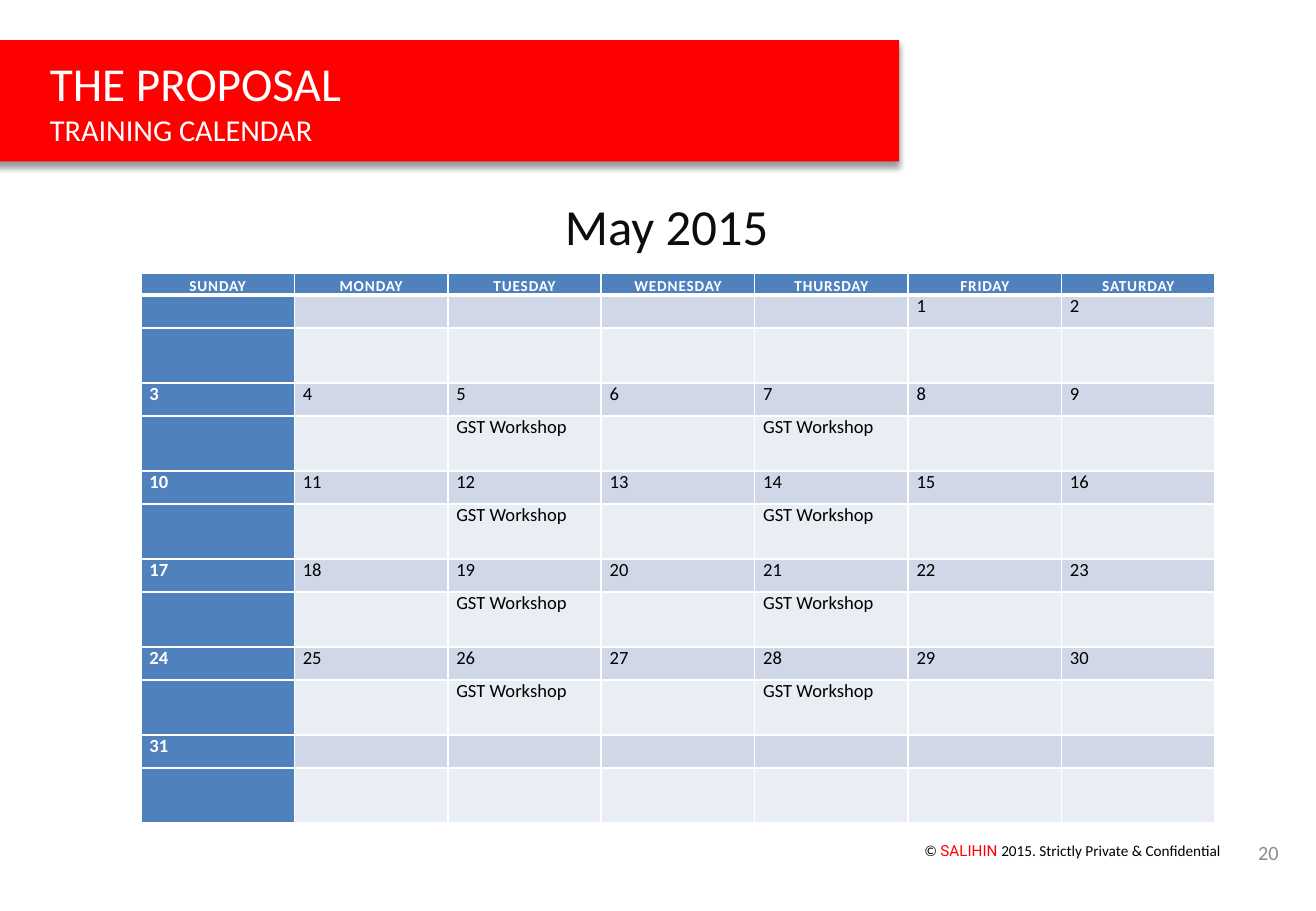
from lxml.etree import SubElement
from pptx import Presentation
from pptx.dml.color import RGBColor
from pptx.enum.text import MSO_ANCHOR as Anchor, MSO_AUTO_SIZE as AutoSize, PP_ALIGN as Align
from pptx.oxml.ns import qn
from pptx.util import Inches, Pt

COLORS = {
    "banner": "FF0000", "white": "FFFFFF", "black": "000000", "month": "0D0D0D",
    "header": "4F81BD", "dates": "D0D8E8", "events": "E9EDF4", "page_number": "8C8C8C",
}
DAYS = ["SUNDAY", "MONDAY", "TUESDAY", "WEDNESDAY", "THURSDAY", "FRIDAY", "SATURDAY"]
WEEKS = 6
FIRST_WEEKDAY = 5      # column of the first of May
LAST_DATE = 31
WORKSHOP_DATES = {date for week in range(4) for date in (5 + 7 * week, 7 + 7 * week)}


def style(span, size, color, font="Calibri", bold=False):
    span.font.size = Pt(size)
    span.font.name = font
    span.font.bold = bold
    span.font.color.rgb = RGBColor.from_string(COLORS[color])


def add_text(page, box, spans, size, align=Align.LEFT, anchor=Anchor.TOP, wrap=True):
    """Place a one-paragraph text box; spans are (text, colour, font)."""
    frame = page.shapes.add_textbox(*map(Inches, box)).text_frame
    frame.word_wrap = wrap
    frame.vertical_anchor = anchor
    para = frame.paragraphs[0]
    para.alignment = align
    for text, color, font in spans:
        span = para.add_run()
        span.text = text
        style(span, size, color, font)


def add_banner(page, box):
    """Red title band with a soft shadow below."""
    title = page.shapes.title
    title.left, title.top, title.width, title.height = map(Inches, box)
    title.fill.solid()
    title.fill.fore_color.rgb = RGBColor.from_string(COLORS["banner"])
    effects = SubElement(title.element.spPr, qn("a:effectLst"))
    shadow = SubElement(effects, qn("a:outerShdw"), blurRad=str(Pt(4)), dist=str(Pt(3)),
                        dir="5400000", rotWithShape="0")
    shade = SubElement(shadow, qn("a:srgbClr"), val=COLORS["black"])
    SubElement(shade, qn("a:alpha"), val="40000")

    frame = title.text_frame
    frame.text = "THE PROPOSAL\nTRAINING CALENDAR"
    frame.auto_size = AutoSize.NONE
    frame.vertical_anchor = Anchor.MIDDLE
    for para, size in zip(frame.paragraphs, (28, 18)):
        para.alignment = Align.LEFT
        para._p.get_or_add_pPr().set("marL", str(Inches(0.58)))
        style(para.runs[0], size, "white")


def set_borders(cell, top, bottom):
    properties = cell._tc.get_or_add_tcPr()
    for side, width in (("L", 1), ("R", 1), ("T", top), ("B", bottom)):
        line = SubElement(properties, qn(f"a:ln{side}"), w=str(Pt(width)))
        SubElement(SubElement(line, qn("a:solidFill")), qn("a:srgbClr"), val=COLORS["white"])


def cell_text(row, column):
    """Header, date rows on odd numbers, event rows on even numbers."""
    if row == 0:
        return DAYS[column]
    date = (row - 1) // 2 * 7 + column - FIRST_WEEKDAY + 1
    if row % 2:
        return str(date) if 1 <= date <= LAST_DATE else ""
    return "GST Workshop" if date in WORKSHOP_DATES else ""


def fill_cell(cell, row, column):
    is_header = row == 0
    is_dark = is_header or column == 0
    set_borders(cell, top=3 if row == 1 else 1, bottom=3 if is_header else 1)
    cell.fill.solid()
    fill = "header" if is_dark else "dates" if row % 2 else "events"
    cell.fill.fore_color.rgb = RGBColor.from_string(COLORS[fill])
    cell.margin_left = cell.margin_right = Inches(0.07)
    cell.margin_top = cell.margin_bottom = 0
    cell.vertical_anchor = Anchor.BOTTOM if is_header else Anchor.TOP

    para = cell.text_frame.paragraphs[0]
    para.space_after = Pt(2)
    para.alignment = Align.CENTER if is_header else Align.LEFT
    text = cell_text(row, column)
    if not text:
        SubElement(para._p, qn("a:endParaRPr"), sz="1100")
        return
    para.text = text
    span = para.runs[0]
    style(span, 9 if is_header else 11, "white" if is_dark else "black", bold=is_dark)
    if is_header:
        span.font._element.set("spc", "50")


def add_calendar(page, box):
    """Header row, then a date row and an event row for each week."""
    left, top, width, height = box
    header_height = 0.18
    week_height = (height - header_height) / WEEKS
    table = page.shapes.add_table(1 + 2 * WEEKS, len(DAYS), *map(Inches, box)).table
    table.horz_banding = False
    for column in table.columns:
        column.width = Inches(width / len(DAYS))
    for number, row in enumerate(table.rows):
        share = 3 / 8 if number % 2 else 5 / 8
        row.height = Inches(week_height * share if number else header_height)
        for column, cell in enumerate(row.cells):
            fill_cell(cell, number, column)


def add_footer(page, box):
    """Copyright line on the left, page number at the right end."""
    left, top, width, height = box
    number_width = 0.4
    add_text(page, (left + width - number_width, top, number_width, height),
             [("20", "page_number", "Calibri")], 12, Align.RIGHT, Anchor.MIDDLE)
    add_text(page, (left, top + 0.06, 2.91, 0.25),
             [("© ", "black", "Calibri"), ("SALIHIN ", "banner", "Roboto"),
              ("2015. Strictly Private & Confidential", "black", "Calibri")],
             9, Align.RIGHT)


def main():
    deck = Presentation()
    deck.slide_width, deck.slide_height = Inches(10.83), Inches(7.5)
    page = deck.slides.add_slide(deck.slide_layouts[5])
    add_banner(page, (-0.27, 0.33, 7.67, 1))
    add_footer(page, (7.23, 6.82, 3.39, 0.4))
    add_calendar(page, (1.16, 2.25, 8.84, 4.53))
    add_text(page, (4.55, 1.55, 1.9, 0.61), [("May 2015", "month", "Calibri")], 30,
             anchor=Anchor.MIDDLE, wrap=False)
    deck.save("out.pptx")


if __name__ == "__main__":
    main()
